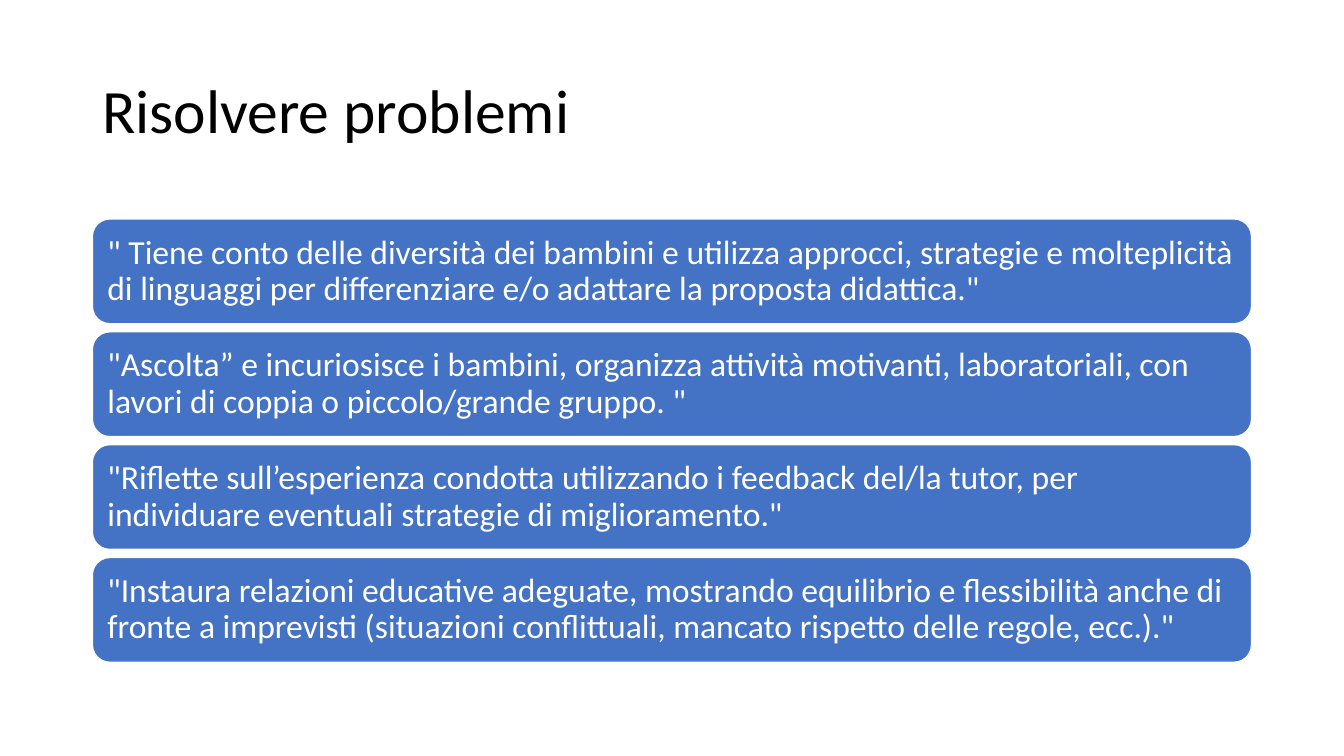
from pptx import Presentation
from pptx.dml.color import RGBColor
from pptx.enum import shapes, text
from pptx.util import Pt

BLUE = RGBColor(0x44, 0x72, 0xC4)
WHITE = RGBColor(0xFF, 0xFF, 0xFF)
BLACK = RGBColor(0, 0, 0)

LEFT, WIDTH = 66, 828
TOP, HIGH, STEP = 156.4, 74.9, 80.6

TITLE = "Risolvere problemi"
CARDS = [
    '" Tiene conto delle diversità dei bambini e utilizza approcci, strategie e '
    'molteplicità di linguaggi per differenziare e/o adattare la proposta didattica."',
    '"Ascolta” e incuriosisce i bambini, organizza attività motivanti, '
    'laboratoriali, con lavori di coppia o piccolo/grande gruppo. "',
    '"Riflette sull’esperienza condotta utilizzando i feedback del/la tutor, '
    'per individuare eventuali strategie di miglioramento."',
    '"Instaura relazioni educative adeguate, mostrando equilibrio e flessibilità anche '
    'di fronte a imprevisti (situazioni conflittuali, mancato rispetto delle regole, ecc.)."',
]


def write(shape, words, size, color):
    frame = shape.text_frame
    frame.word_wrap = True
    frame.vertical_anchor = text.MSO_ANCHOR.MIDDLE
    para = frame.paragraphs[0]
    para.alignment = text.PP_ALIGN.LEFT
    para.line_spacing = 0.9
    run = para.add_run()
    run.text = words
    run.font.name = "Calibri"
    run.font.size = Pt(size)
    run.font.color.rgb = color


def add_title(slide, words):
    box = slide.shapes.add_textbox(Pt(LEFT), Pt(28.8), Pt(WIDTH), Pt(104.4))
    write(box, words, 44, BLACK)


def add_card(slide, top, words):
    card = slide.shapes.add_shape(
        shapes.MSO_SHAPE.ROUNDED_RECTANGLE, Pt(LEFT), Pt(top), Pt(WIDTH), Pt(HIGH))
    card.shadow.inherit = False
    card.fill.solid()
    card.fill.fore_color.rgb = BLUE
    card.line.color.rgb = WHITE
    card.line.width = Pt(1)
    write(card, words, 24, WHITE)


def main():
    deck = Presentation()
    deck.slide_width, deck.slide_height = Pt(960), Pt(540)
    slide = deck.slides.add_slide(deck.slide_layouts[6])
    add_title(slide, TITLE)
    for row, words in enumerate(CARDS):
        add_card(slide, TOP + row * STEP, words)
    deck.save("out.pptx")


if __name__ == "__main__":
    main()
